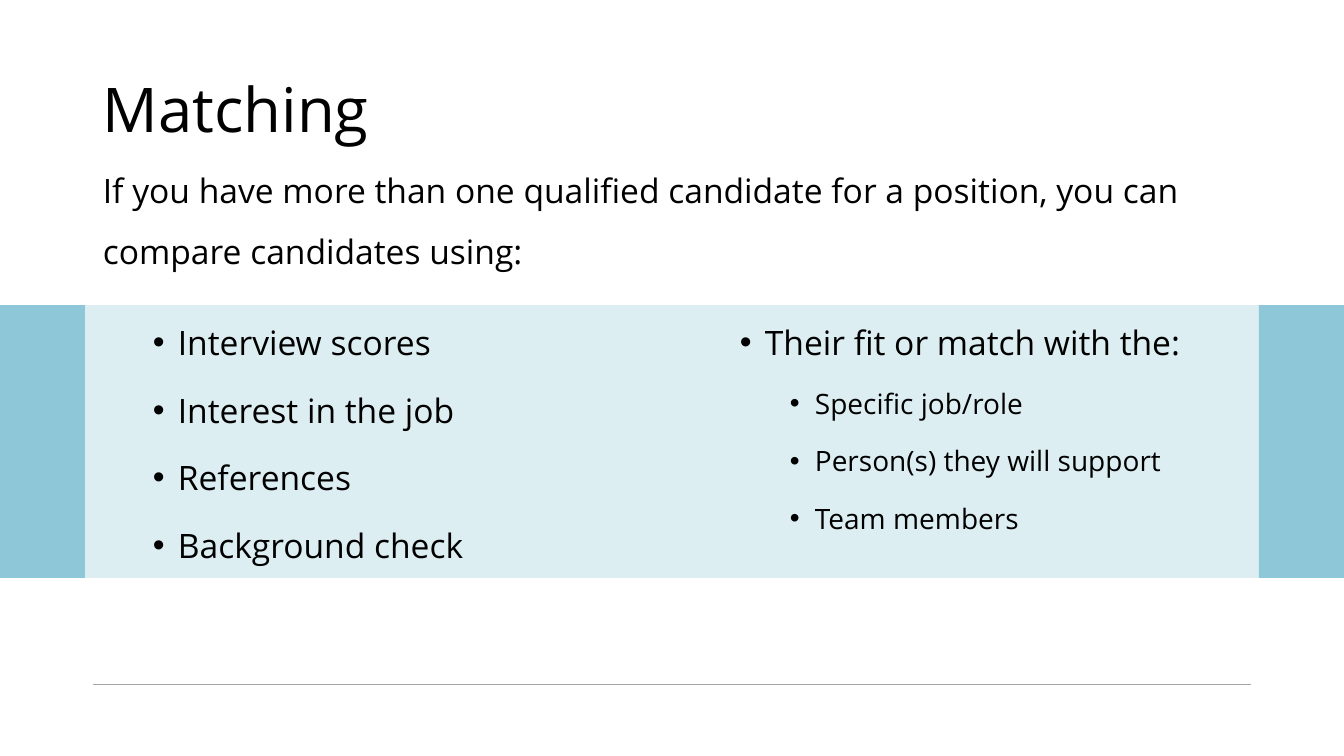
from pptx import Presentation
from pptx.dml.color import RGBColor
from pptx.enum.shapes import MSO_CONNECTOR, MSO_SHAPE
from pptx.enum.text import MSO_ANCHOR
from pptx.util import Pt
from pptx.oxml.ns import qn
from lxml.etree import SubElement

WIDE, HIGH = 1344, 756
SIDE, EDGE = 85, 93
BLUE, GREY, BLACK = "8EC7D7", "A6A6A6", "000000"
FONT = "Open Sans"


def px(n):
    return round(n * 914400 / 100.8)


def tint(hue):
    return RGBColor.from_string(hue)


def block(slide, box, alpha=None):
    shape = slide.shapes.add_shape(MSO_SHAPE.RECTANGLE, *map(px, box))
    shape.shadow.inherit = False
    shape.line.fill.background()
    shape.fill.solid()
    shape.fill.fore_color.rgb = tint(BLUE)
    if alpha:
        color = shape.fill._xPr.find(".//" + qn("a:srgbClr"))
        SubElement(color, qn("a:alpha"), val=str(alpha * 1000))


def band(slide, box):
    """Pale centre with a solid block at each end."""
    left, top, width, height = box
    block(slide, (left + SIDE, top, width - 2 * SIDE, height), 30)
    for x in (left, left + width - SIDE):
        block(slide, (x, top, SIDE, height))


def words(slide, box, lines, size, space, anchor=MSO_ANCHOR.TOP):
    frame = slide.shapes.add_textbox(*map(px, box)).text_frame
    frame.word_wrap = True
    frame.vertical_anchor = anchor
    frame.text = "\n".join(lines)
    for para in frame.paragraphs:
        para.line_spacing = space
        style(para, size)
    return frame


def style(para, size):
    for run in para.runs:
        run.font.name = FONT
        run.font.size = Pt(size)
        run.font.color.rgb = tint(BLACK)


def bullets(slide, box, items):
    """Bulleted column; each item is a level and its text."""
    frame = words(slide, box, [text for _, text in items], 24, 1.5)
    for i, (para, (level, _)) in enumerate(zip(frame.paragraphs, items)):
        para.level = level
        para.space_before = Pt(5 if i else 0)
        props = para._p.get_or_add_pPr()
        props.set("marL", str(px(25 + 50 * level)))
        props.set("indent", str(px(-25)))
        SubElement(props, qn("a:buFont"), typeface="Arial")
        SubElement(props, qn("a:buChar"), char="•")
        style(para, 28 - 4 * level)


def rule(slide, left, top, width):
    line = slide.shapes.add_connector(
        MSO_CONNECTOR.STRAIGHT, px(left), px(top), px(left + width), px(top))
    line.line.color.rgb = tint(GREY)
    line.line.width = Pt(0.5)
    SubElement(line._element.spPr, qn("a:effectLst"))


def main():
    deck = Presentation()
    deck.slide_width, deck.slide_height = px(WIDE), px(HIGH)
    slide = deck.slides.add_slide(deck.slide_layouts[6])
    span = WIDE - 2 * EDGE

    # Footer line and coloured band
    rule(slide, EDGE, 684, span)
    band(slide, (0, 305, WIDE, 273))

    # Title and introduction
    words(slide, (EDGE, 40, span, 146), ["Matching"], 44, 0.9,
          MSO_ANCHOR.MIDDLE)
    words(slide, (EDGE, 185, span, 91),
          ["If you have more than one qualified candidate for a position, "
           "you can compare candidates using:"], 24, 1.5, MSO_ANCHOR.BOTTOM)

    # Two columns of criteria
    bullets(slide, (EDGE, 297, 569, 385), [
        (1, "Interview scores"),
        (1, "Interest in the job"),
        (1, "References"),
        (1, "Background check")])
    bullets(slide, (680, 297, 571, 385), [
        (1, "Their fit or match with the:"),
        (2, "Specific job/role"),
        (2, "Person(s) they will support"),
        (2, "Team members")])
    deck.save("out.pptx")


if __name__ == "__main__":
    main()
